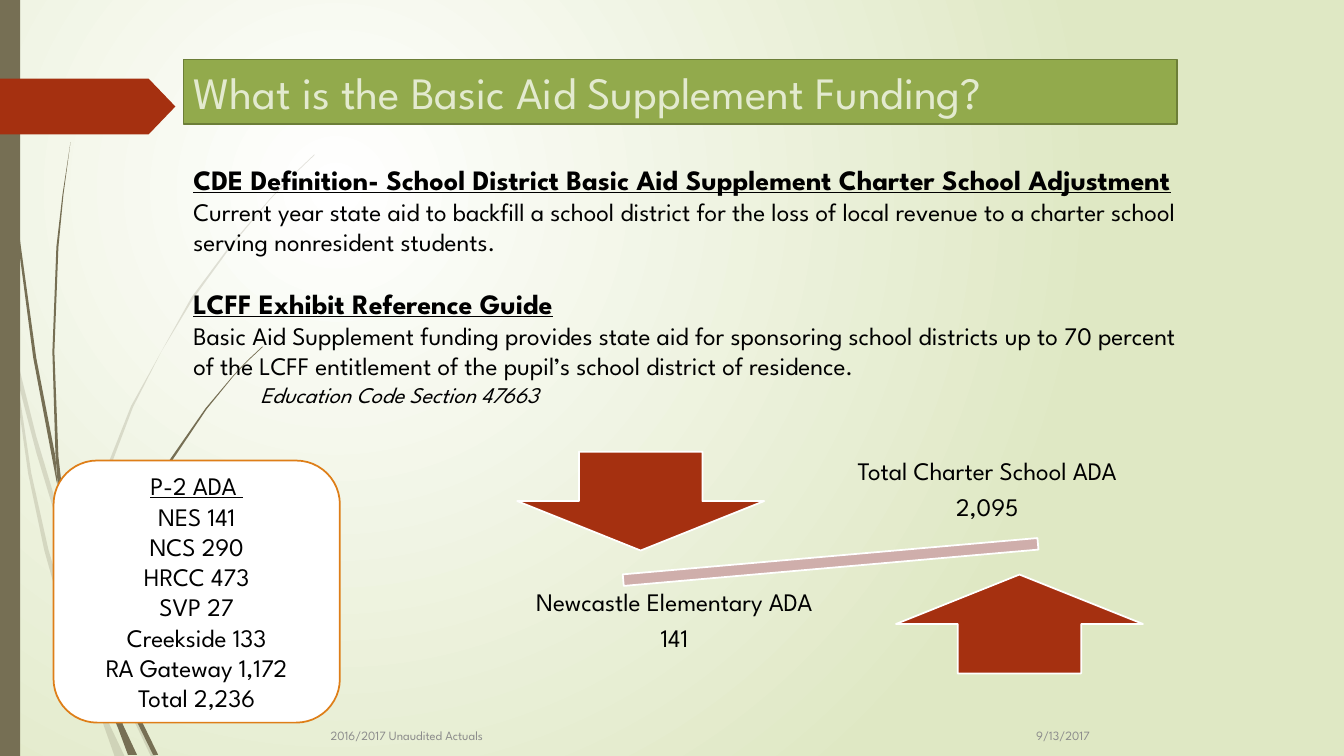
from dataclasses import dataclass

from pptx import Presentation
from pptx.dml.color import RGBColor
from pptx.enum.shapes import MSO_SHAPE as Preset
from pptx.enum.text import MSO_ANCHOR as Anchor, MSO_AUTO_SIZE as AutoSize, PP_ALIGN as Align
from pptx.oxml.ns import qn
from pptx.util import Pt
from lxml.etree import SubElement


@dataclass(frozen=True)
class Theme:
    font: str = "League Spartan"
    ink: str = "000000"
    white: str = "FFFFFF"
    pale_green: str = "DFE8C4"
    olive: str = "766F54"
    red: str = "A53010"
    rose: str = "CFAEAB"
    orange: str = "DE7E18"
    green: str = "92AA4C"
    dark_green: str = "6C7E38"
    title_text: str = "E3EACF"
    grey: str = "8C8C8C"
    title_size: int = 32
    heading_size: int = 20
    body_size: int = 18
    note_size: int = 16
    footer_size: int = 9


theme = Theme()


def paint(shape, fill, line=None):
    shape.shadow.inherit = False
    shape.fill.solid()
    shape.fill.fore_color.rgb = RGBColor.from_string(fill)
    if line:
        shape.line.color.rgb = RGBColor.from_string(line)
        shape.line.width = Pt(1.25)
    else:
        shape.line.fill.background()


def write(frame, text, size=theme.body_size, color=theme.ink, align=Align.LEFT):
    """Fill the first paragraph if it is still empty, else add one."""
    frame.word_wrap = True
    paragraph = frame.paragraphs[0]
    if paragraph.runs:
        paragraph = frame.add_paragraph()
    paragraph.add_run().text = text
    paragraph.alignment = align
    paragraph.font.name = theme.font
    paragraph.font.size = Pt(size)
    paragraph.font.color.rgb = RGBColor.from_string(color)
    return paragraph


deck = Presentation()
deck.slide_width, deck.slide_height = Pt(960), Pt(540)
slide = deck.slides.add_slide(deck.slide_layouts[5])
shapes = slide.shapes

# Background: white glow in the upper left, fading to pale green
glow = slide.background.fill
glow.gradient()
for stop, color in zip(glow.gradient_stops, (theme.white, theme.pale_green)):
    stop.color.rgb = RGBColor.from_string(color)
gradient = next(slide.element.iter(qn("a:gradFill")))
gradient.remove(gradient.find(qn("a:lin")))
circle = SubElement(gradient, qn("a:path"), path="circle")
SubElement(circle, qn("a:fillToRect"), l="50000", t="50000", r="100000", b="100000")

# Grass blades, outlined in units of 0.72 pt
faint_blades = [
    [(0, 282), (9, 322), (11, 350), (17, 376), (31, 469), (48, 545), (70, 619), (93, 683),
     (105, 711), (124, 751), (114, 751), (101, 714), (92, 693), (65, 621), (44, 546),
     (28, 470), (11, 350), (10, 344), (0, 299)],
    [(14, 345), (36, 433), (62, 520), (85, 586), (92, 607), (127, 692), (155, 751),
     (150, 751), (123, 694), (88, 610), (58, 522), (36, 449), (17, 376)],
    [(88, 596), (88, 584), (95, 522), (110, 462), (132, 404), (160, 349), (192, 296),
     (229, 245), (268, 198), (290, 175), (312, 154), (312, 153), (289, 175), (268, 197),
     (228, 244), (190, 295), (130, 403), (107, 461), (92, 522), (85, 584), (85, 586)],
]
dark_blades = [
    [(3, 0), (4, 48), (7, 110), (17, 233), (33, 355), (56, 477), (57, 481), (55, 453),
     (36, 355), (19, 232), (8, 109), (5, 48), (4, 0)],
    [(70, 141), (63, 193), (58, 245), (54, 349), (58, 453), (64, 505), (72, 556),
     (84, 608), (98, 657), (110, 691), (122, 719), (136, 749), (127, 749), (117, 722),
     (111, 708), (93, 659), (79, 608), (68, 557), (57, 477), (55, 449), (52, 349),
     (56, 245), (62, 193)],
    [(110, 641), (113, 649), (136, 706), (157, 749), (152, 749), (132, 708), (111, 656)],
    [(106, 645), (111, 656), (115, 687), (122, 719), (116, 706), (110, 691)],
    [(110, 641), (111, 633), (116, 592), (125, 552), (140, 513), (158, 476), (205, 406),
     (231, 374), (245, 359), (261, 344), (260, 344), (245, 358), (231, 373), (204, 405),
     (156, 474), (137, 512), (122, 551), (112, 591), (106, 631)],
]
for blades, opacity in ((faint_blades, 20), (dark_blades, 100)):
    for outline in blades:
        builder = shapes.build_freeform(*outline[0], scale=Pt(0.72))
        builder.add_line_segments(outline[1:], close=True)
        blade = builder.convert_to_shape()
        paint(blade, theme.olive)
        if opacity < 100:
            blade_color = next(blade.element.spPr.iter(qn("a:srgbClr")))
            SubElement(blade_color, qn("a:alpha"), val=str(opacity * 1000))

side_bar = shapes.add_shape(Preset.RECTANGLE, 0, 0, Pt(14.4), Pt(540))
paint(side_bar, theme.olive)
red_tab = shapes.add_shape(Preset.PENTAGON, 0, Pt(56.2), Pt(125.3), Pt(39.8))
red_tab.adjustments[0] = 0.48
paint(red_tab, theme.red)

# Footer
footer = shapes.add_textbox(Pt(229), Pt(510.5), Pt(600), Pt(29.5)).text_frame
footer.vertical_anchor = Anchor.MIDDLE
footer_tabs = SubElement(footer.paragraphs[0]._p.get_or_add_pPr(), qn("a:tabLst"))
SubElement(footer_tabs, qn("a:tab"), pos=str(Pt(504)), algn="l")
write(footer, "2016/2017 Unaudited Actuals\t9/13/2017", theme.footer_size, theme.grey)

# Title
title = shapes.title
title.left, title.top, title.width, title.height = Pt(131), Pt(42.5), Pt(710), Pt(46)
paint(title, theme.green, theme.dark_green)
title.text_frame.auto_size = AutoSize.NONE
title.text_frame.vertical_anchor = Anchor.TOP
write(title.text_frame, "What is the Basic Aid Supplement Funding?",
      theme.title_size, theme.title_text)

# Definitions
definitions = shapes.add_textbox(Pt(131), Pt(112.6), Pt(726.5), Pt(230)).text_frame
for heading, explanation in (
    ("CDE Definition- School District Basic Aid Supplement Charter School Adjustment",
     "Current year state aid to backfill a school district for the loss of local revenue "
     "to a charter school serving nonresident students."),
    ("LCFF Exhibit Reference Guide",
     "Basic Aid Supplement funding provides state aid for sponsoring school districts up "
     "to 70 percent of the LCFF entitlement of the pupil’s school district of residence."),
):
    later = bool(definitions.text)
    heading_line = write(definitions, heading, theme.heading_size)
    heading_line.font.bold = heading_line.font.underline = True
    if later:
        heading_line.space_before = Pt(21.6)
    write(definitions, explanation)
citation = write(definitions, "Education Code Section 47663", theme.note_size)
citation.font.italic = True
citation._p.get_or_add_pPr().set("marL", str(Pt(48)))

# Balance of the two attendance counts
beam = shapes.add_shape(Preset.MATH_MINUS, Pt(391), Pt(383.8), Pt(404.6), Pt(35.3))
beam.rotation = -5
paint(beam, theme.rose, theme.white)
for arrow_kind, left, top in ((Preset.DOWN_ARROW, 369.4, 322.6), (Preset.UP_ARROW, 640, 410.4)):
    arrow = shapes.add_shape(arrow_kind, Pt(left), Pt(top), Pt(176.4), Pt(70.6))
    paint(arrow, theme.red, theme.white)
for school, count, left, top, width in (
    ("Total Charter School ADA", "2,095", 522.7, 313.2, 365),
    ("Newcastle Elementary ADA", "141", 350, 407, 263.5),
):
    attendance = shapes.add_textbox(Pt(left), Pt(top), Pt(width), Pt(74)).text_frame
    attendance.vertical_anchor = Anchor.MIDDLE
    for text in (school, count):
        line = write(attendance, text, align=Align.CENTER)
        line.line_spacing = 0.9
        line.space_after = Pt(6.3)

# P-2 attendance by school
p2_card = shapes.add_shape(Preset.ROUNDED_RECTANGLE, Pt(38.3), Pt(329), Pt(204.5), Pt(187.2))
paint(p2_card, theme.white, theme.orange)
p2_card.text_frame.vertical_anchor = Anchor.MIDDLE
p2_heading = write(p2_card.text_frame, "P-2 ADA ", align=Align.CENTER)
p2_heading.font.underline = True
for school in ("NES 141", "NCS 290", "HRCC 473", "SVP 27", "Creekside 133",
               "RA Gateway 1,172", "Total 2,236"):
    write(p2_card.text_frame, school, align=Align.CENTER)

deck.save("out.pptx")
